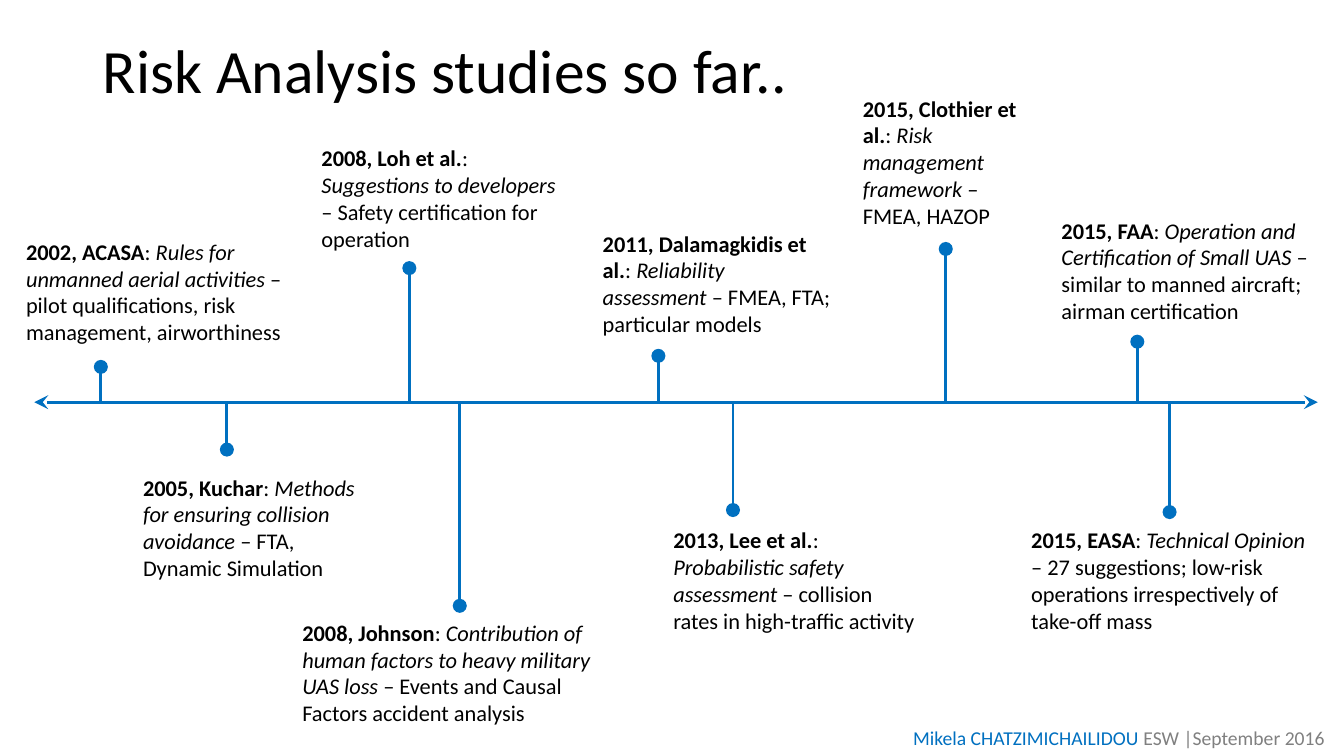
from lxml import etree
from pptx import Presentation
from pptx.dml.color import RGBColor
from pptx.enum.shapes import MSO_CONNECTOR
from pptx.enum.text import MSO_ANCHOR, MSO_AUTO_SIZE, PP_ALIGN
from pptx.oxml.ns import qn
from pptx.util import Inches, Pt

STRAIGHT = MSO_CONNECTOR.STRAIGHT
MIDDLE, TOP = MSO_ANCHOR.MIDDLE, MSO_ANCHOR.TOP
LEFT, RIGHT = PP_ALIGN.LEFT, PP_ALIGN.RIGHT
GROW, FIXED = MSO_AUTO_SIZE.SHAPE_TO_FIT_TEXT, MSO_AUTO_SIZE.NONE

COLOURS = {"ink": "000000", "accent": "0070C0", "muted": "808080"}
FONT = "Calibri"

TITLE = "Risk Analysis studies so far.."
AUTHOR = "Mikela CHATZIMICHAILIDOU "
EVENT = "ESW |September 2016"

AXIS_LEFT, AXIS_RIGHT, AXIS_Y = 0.34, 13.07, 3.99
NOTE_HEIGHT = 1.18

# source, topic, finding, note (left, top, width), marker (x, y)
STUDIES = [
    ("2002, ACASA", "Rules for unmanned aerial activities ",
     "– pilot qualifications, risk management, airworthiness",
     (0.16, 2.31, 3.01), (1, 3.64)),
    ("2005, Kuchar", "Methods for ensuring collision avoidance",
     " – FTA, Dynamic Simulation",
     (1.32, 4.65, 2.35), (2.25, 4.46)),
    ("2008, Loh et al.", "Suggestions to developers ",
     "– Safety certification for operation",
     (3.09, 1.38, 2.63), (4.06, 2.66)),
    ("2008, Johnson",
     "Contribution of human factors to heavy military UAS loss ",
     "– Events and Causal Factors accident analysis",
     (2.9, 6.09, 3.31), (4.56, 6.01)),
    ("2011, Dalamagkidis et al.", "Reliability assessment ",
     "– FMEA, FTA; particular models",
     (5.88, 2.23, 2.46), (6.53, 3.53)),
    ("2013, Lee et al.", "Probabilistic safety assessment",
     " – collision rates in high-traffic activity",
     (6.58, 5.17, 2.63), (7.27, 5.06)),
    ("2015, Clothier et al.", "Risk management framework ",
     "– FMEA, HAZOP",
     (8.46, 0.89, 1.95), (9.38, 2.47)),
    ("2015, FAA", "Operation and Certification of Small UAS",
     " – similar to manned aircraft; airman certification",
     (10.43, 2.1, 2.87), (11.28, 3.39)),
    ("2015, EASA", "Technical Opinion",
     " – 27 suggestions; low-risk operations irrespectively of take-off mass",
     (10.13, 5.17, 3.07), (11.6, 5.08)),
]


def add_text(slide, place, runs, size, align=LEFT, anchor=TOP, fit=GROW):
    box = slide.shapes.add_textbox(*map(Inches, place))
    frame = box.text_frame
    frame.word_wrap = True
    frame.auto_size = fit
    frame.vertical_anchor = anchor
    paragraph = frame.paragraphs[0]
    paragraph.alignment = align
    for words, colour, bold, italic in runs:
        run = paragraph.add_run()
        run.text = words
        run.font.name = FONT
        run.font.size = Pt(size)
        run.font.bold = bold
        run.font.italic = italic
        run.font.color.rgb = RGBColor.from_string(COLOURS[colour])
    return frame


def add_line(slide, start, end, **line_ends):
    connector = slide.shapes.add_connector(STRAIGHT, *map(Inches, start + end))
    connector.line.color.rgb = RGBColor.from_string(COLOURS["accent"])
    connector.line.width = Pt(2)
    outline = connector.line._get_or_add_ln()
    for tag in ("headEnd", "tailEnd"):
        if tag in line_ends:
            etree.SubElement(outline, qn(f"a:{tag}"),
                             type=line_ends[tag], w="lg", len="lg")
    etree.SubElement(connector._element.spPr, qn("a:effectLst"))


def main():
    deck = Presentation()
    deck.slide_width, deck.slide_height = Inches(13.33), Inches(7.5)
    slide = deck.slides.add_slide(deck.slide_layouts[6])

    title = add_text(slide, (0.92, 0, 11.5, 1.45),
                     [(TITLE, "ink", False, False)], 44,
                     anchor=MIDDLE, fit=FIXED)
    title.paragraphs[0].line_spacing = 0.9

    footer = add_text(slide, (7.8, 7.15, 5.53, 0.34),
                      [(AUTHOR, "accent", False, False),
                       (EVENT, "muted", False, False)], 14, align=RIGHT)
    footer.margin_right = Inches(0.19)

    add_line(slide, (AXIS_LEFT, AXIS_Y), (AXIS_RIGHT, AXIS_Y),
             headEnd="stealth", tailEnd="stealth")

    for source, topic, finding, (left, top, width), marker in STUDIES:
        add_line(slide, (marker[0], AXIS_Y), marker, tailEnd="oval")
        add_text(slide, (left, top, width, NOTE_HEIGHT),
                 [(source, "ink", True, False),
                  (": ", "ink", False, False),
                  (topic, "ink", False, True),
                  (finding, "ink", False, False)], 16)

    deck.save("out.pptx")


if __name__ == "__main__":
    main()
